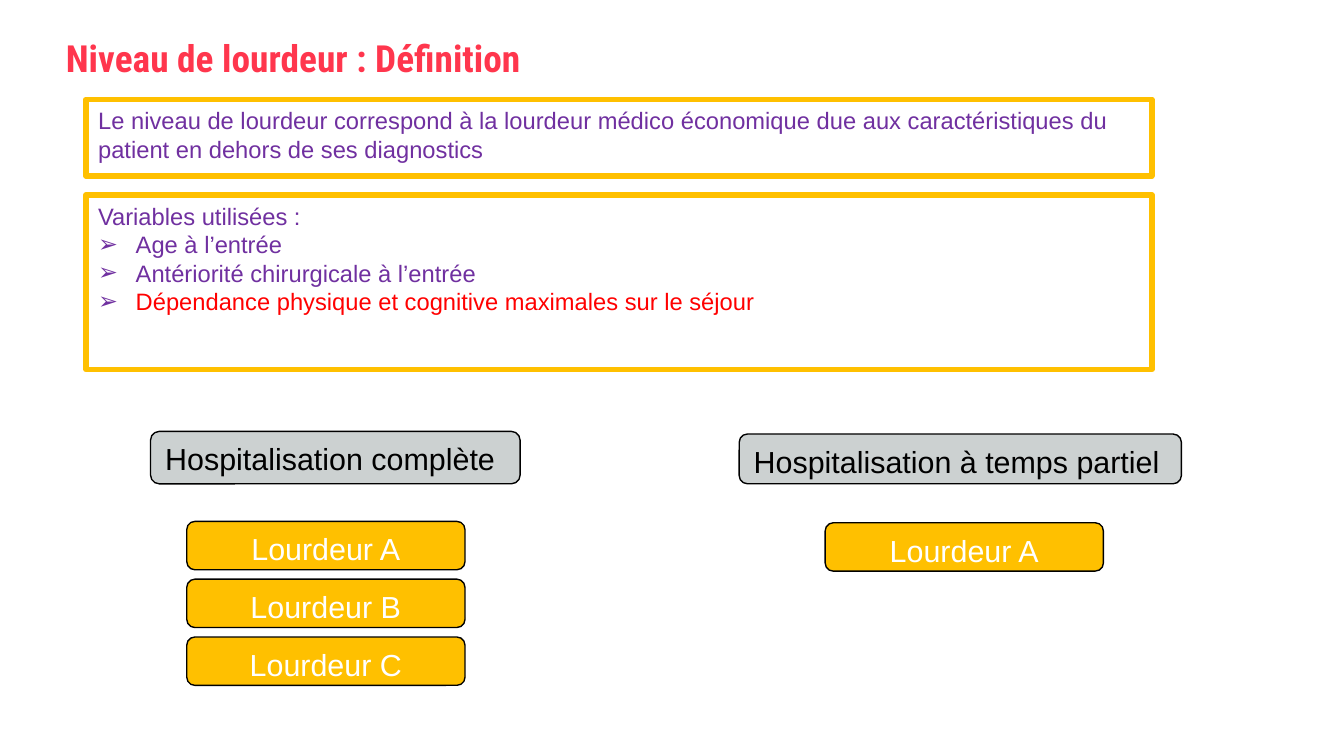
import pptx
import pptx.util
from dataclasses import dataclass
from lxml import etree
from pptx.dml.color import RGBColor
from pptx.enum.shapes import MSO_SHAPE
from pptx.enum.text import MSO_ANCHOR, MSO_AUTO_SIZE, PP_ALIGN
from pptx.oxml.ns import qn
from pptx.util import Inches, Pt


@dataclass(frozen=True)
class Theme:
    title_font: str = "Roboto Condensed"
    body_font: str = "Arial"
    title_size: float = 20
    body_size: float = 12.7
    label_size: float = 16.3
    title: str = "FF364D"
    body: str = "7030A0"
    emphasis: str = "FF0000"
    gold: str = "FFC000"
    grey: str = "CCD1D1"
    black: str = "000000"
    white: str = "FFFFFF"


THEME = Theme()


def set_font(paragraph, name, size, color, bold=False):
    font = paragraph.font
    font.name = name
    font.size = Pt(size)
    font.bold = bold
    font.color.rgb = RGBColor.from_string(color)


def add_bullet(paragraph):
    """Give the paragraph a hanging arrow bullet in the body colour."""
    properties = paragraph._p.get_or_add_pPr()
    properties.set("marL", str(Inches(0.28)))
    properties.set("indent", str(-Inches(0.28)))
    bullet_color = etree.Element(qn("a:buClr"))
    etree.SubElement(bullet_color, qn("a:srgbClr"), val=THEME.body)
    bullet_font = etree.Element(qn("a:buFont"), typeface=THEME.body_font)
    bullet = etree.Element(qn("a:buChar"), char="➢")
    for element in (bullet_color, bullet_font, bullet):
        properties.insert_element_before(element, "a:defRPr")


def add_title(slide, text):
    title = slide.shapes.title
    title.left, title.top = Inches(0.39), Inches(0.1)
    title.width, title.height = Inches(5.25), Inches(0.5)
    frame = title.text_frame
    frame.text = text
    frame.auto_size = MSO_AUTO_SIZE.NONE
    frame.vertical_anchor = MSO_ANCHOR.TOP
    paragraph = frame.paragraphs[0]
    paragraph.alignment = PP_ALIGN.LEFT
    paragraph.line_spacing = Pt(31.8)
    set_font(paragraph, THEME.title_font, THEME.title_size, THEME.title, bold=True)


def add_box(slide, kind, left, top, width, height, line_color, line_width):
    """Add an outlined, unfilled shape with text starting at its top."""
    shape = slide.shapes.add_shape(
        kind, Inches(left), Inches(top), Inches(width), Inches(height))
    shape.shadow.inherit = False
    shape.fill.background()
    shape.line.color.rgb = RGBColor.from_string(line_color)
    shape.line.width = Pt(line_width)
    frame = shape.text_frame
    frame.word_wrap = True
    frame.vertical_anchor = MSO_ANCHOR.TOP
    frame.margin_left = frame.margin_right = Inches(0.09)
    frame.margin_top = frame.margin_bottom = Inches(0.05)
    return shape


def add_text_panel(slide, top, height, text, bullets=()):
    """Add a gold-framed panel; bullets are pairs of text and colour."""
    panel = add_box(slide, MSO_SHAPE.RECTANGLE, 0.64, top, 7.93, height, THEME.gold, 3)
    frame = panel.text_frame
    frame.text = "\n".join([text] + [item for item, _ in bullets])
    colors = [THEME.body] + [color for _, color in bullets]
    for paragraph, color in zip(frame.paragraphs, colors):
        paragraph.alignment = PP_ALIGN.LEFT
        set_font(paragraph, THEME.body_font, THEME.body_size, color)
    for paragraph in frame.paragraphs[1:]:
        add_bullet(paragraph)


def add_label(slide, left, top, width, height, text, fill, color, alignment):
    label = add_box(slide, MSO_SHAPE.ROUNDED_RECTANGLE, left, top, width, height,
                    THEME.black, 0.75)
    label.fill.solid()
    label.fill.fore_color.rgb = RGBColor.from_string(fill)
    label.text_frame.text = text
    paragraph = label.text_frame.paragraphs[0]
    paragraph.alignment = alignment
    set_font(paragraph, THEME.body_font, THEME.label_size, color)


def add_heading(slide, left, top, width, height, text):
    add_label(slide, left, top, width, height, text,
              THEME.grey, THEME.black, PP_ALIGN.LEFT)


def add_levels(slide, left, top, letters):
    for index, letter in enumerate(letters):
        add_label(slide, left, top + index * 0.43, 2.07, 0.36, f"Lourdeur {letter}",
                  THEME.gold, THEME.white, PP_ALIGN.CENTER)


def main():
    presentation = pptx.Presentation()
    presentation.slide_width = Inches(10)
    presentation.slide_height = Inches(10 * 9 / 16)
    slide = presentation.slides.add_slide(presentation.slide_layouts[5])

    add_title(slide, "Niveau de lourdeur : Définition")
    add_text_panel(
        slide, 0.74, 0.57,
        "Le niveau de lourdeur correspond à la lourdeur médico économique due aux "
        "caractéristiques du patient en dehors de ses diagnostics")
    add_text_panel(slide, 1.45, 1.3, "Variables utilisées :", [
        ("Age à l’entrée", THEME.body),
        ("Antériorité chirurgicale à l’entrée", THEME.body),
        ("Dépendance physique et cognitive maximales sur le séjour", THEME.emphasis),
    ])

    add_heading(slide, 1.12, 3.21, 2.75, 0.39, "Hospitalisation complète")
    add_levels(slide, 1.39, 3.88, "ABC")
    add_heading(slide, 5.5, 3.23, 3.29, 0.37, "Hospitalisation à temps partiel")
    add_levels(slide, 6.14, 3.89, "A")

    presentation.save("out.pptx")


if __name__ == "__main__":
    main()
